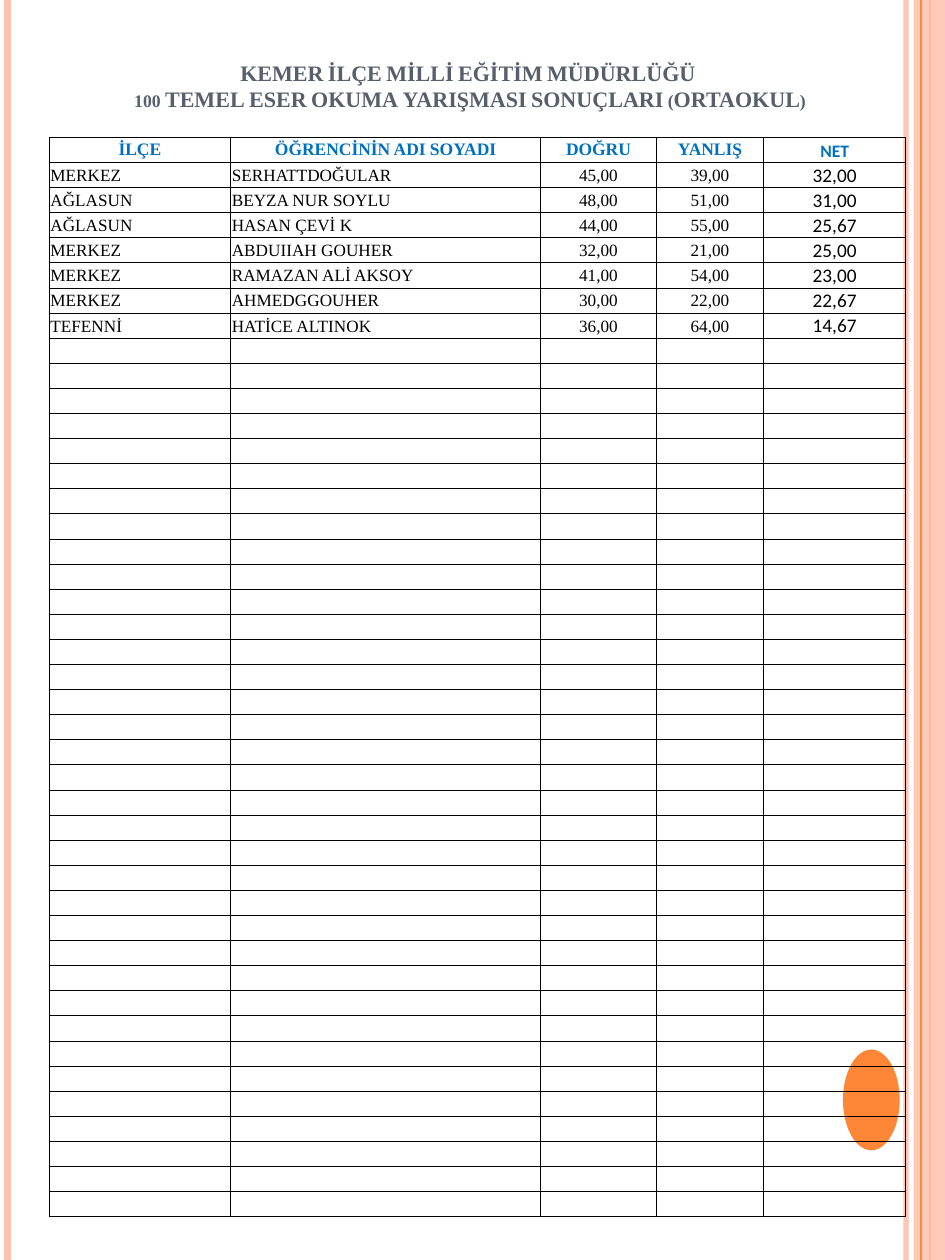
from lxml.etree import SubElement
from pptx import Presentation
from pptx.dml.color import RGBColor
from pptx.enum.shapes import MSO_CONNECTOR, MSO_SHAPE
from pptx.enum.text import MSO_ANCHOR, PP_ALIGN
from pptx.oxml.ns import qn
from pptx.util import Inches, Pt

STRAIGHT = MSO_CONNECTOR.STRAIGHT
RECTANGLE, OVAL = MSO_SHAPE.RECTANGLE, MSO_SHAPE.OVAL
MIDDLE, BOTTOM = MSO_ANCHOR.MIDDLE, MSO_ANCHOR.BOTTOM
LEFT, CENTER = PP_ALIGN.LEFT, PP_ALIGN.CENTER

WHITE = RGBColor(0xFF, 0xFF, 0xFF)
BLACK = RGBColor(0x00, 0x00, 0x00)
PEACH = RGBColor(0xFE, 0xC3, 0xAE)
ORANGE = RGBColor(0xFE, 0x86, 0x37)
SLATE = RGBColor(0x57, 0x5F, 0x6D)
BLUE = RGBColor(0x00, 0x70, 0xC0)

SERIF, SANS = "Times New Roman", "Calibri"
WIDTH, HEIGHT = 7.5, 10
ROW_COUNT = 43
COLUMN_WIDTHS = [1.44, 2.46, 0.92, 0.85, 1.13]
TITLE = (
    "KEMER İLÇE MİLLİ EĞİTİM MÜDÜRLÜĞÜ \v"
    "100 TEMEL ESER OKUMA YARIŞMASI SONUÇLARI (ORTAOKUL)"
)
HEADERS = ["İLÇE", "ÖĞRENCİNİN ADI SOYADI", "DOĞRU", "YANLIŞ", "NET"]
RESULTS = [
    ["MERKEZ", "SERHATTDOĞULAR", "45,00", "39,00", "32,00"],
    ["AĞLASUN", "BEYZA NUR SOYLU", "48,00", "51,00", "31,00"],
    ["AĞLASUN", "HASAN ÇEVİ K", "44,00", "55,00", "25,67"],
    ["MERKEZ", "ABDUIIAH GOUHER", "32,00", "21,00", "25,00"],
    ["MERKEZ", "RAMAZAN ALİ AKSOY", "41,00", "54,00", "23,00"],
    ["MERKEZ", "AHMEDGGOUHER", "30,00", "22,00", "22,67"],
    ["TEFENNİ", "HATİCE ALTINOK", "36,00", "64,00", "14,67"],
]


def set_opacity(shape, percent):
    """Make the colours of a shape partly transparent."""
    for color in shape._element.spPr.iter(qn("a:srgbClr")):
        SubElement(color, qn("a:alpha"), val=str(percent * 1000))


def add_stripe(slide, x, top, height, color, weight, opacity=100):
    """Draw one vertical line."""
    stripe = slide.shapes.add_connector(
        STRAIGHT, Inches(x), Inches(top), Inches(x), Inches(top + height)
    )
    stripe.line.color.rgb = color
    stripe.line.width = Pt(weight)
    SubElement(stripe._element.spPr, qn("a:effectLst"))
    if opacity < 100:
        set_opacity(stripe, opacity)


def add_plain_shape(slide, kind, left, top, width, height, color):
    """Draw a filled shape without outline or shadow."""
    shape = slide.shapes.add_shape(
        kind, Inches(left), Inches(top), Inches(width), Inches(height)
    )
    shape.shadow.inherit = False
    shape.fill.solid()
    shape.fill.fore_color.rgb = color
    shape.line.fill.background()
    return shape


def add_decoration(slide, left, top, width, height):
    """Draw the edge stripes, the right band and the oval."""
    right = left + width
    add_stripe(slide, right - 0.31, top, height, PEACH, 3, 93)
    add_stripe(slide, left + 0.06, top, height, PEACH, 4.5)
    add_stripe(slide, right - 0.12, top, height, ORANGE, 1.5)
    band = add_plain_shape(slide, RECTANGLE, right - 0.25, top, 0.25, height, PEACH)
    set_opacity(band, 87)
    add_stripe(slide, right - 0.19, top, height, ORANGE, 0.75)
    add_plain_shape(slide, OVAL, right - 0.81, top + 8.33, 0.45, 0.8, ORANGE)


def style_font(font, name, size, color, bold):
    """Set the face, size, colour and weight of a font."""
    font.name = name
    font.size = Pt(size)
    font.color.rgb = color
    font.bold = bold


def add_title(slide, left, top, width, height):
    """Place the two-line heading in small capitals."""
    box = slide.shapes.add_textbox(
        Inches(left), Inches(top), Inches(width), Inches(height)
    )
    frame = box.text_frame
    frame.word_wrap = True
    frame.vertical_anchor = BOTTOM
    paragraph = frame.paragraphs[0]
    paragraph.text = TITLE
    paragraph.alignment = CENTER
    style_font(paragraph.font, SERIF, 12.6, SLATE, True)
    paragraph.font._element.set("cap", "small")


def add_borders(cell):
    """Draw thin black lines on the four sides of a cell."""
    properties = cell._tc.get_or_add_tcPr()
    for side in ("a:lnL", "a:lnR", "a:lnT", "a:lnB"):
        line = SubElement(properties, qn(side), w=str(Pt(0.5)))
        fill = SubElement(line, qn("a:solidFill"))
        SubElement(fill, qn("a:srgbClr"), val=str(BLACK))


def fill_cell(cell, text, is_header, column):
    """Write and style one table cell."""
    is_net = column == len(HEADERS) - 1
    margin = Inches(0 if is_header else 0.01)
    cell.margin_left = cell.margin_right = cell.margin_top = margin
    cell.margin_bottom = 0
    cell.vertical_anchor = BOTTOM if is_net else MIDDLE
    add_borders(cell)
    if is_net:
        cell.fill.background()
    else:
        cell.fill.solid()
        cell.fill.fore_color.rgb = WHITE
    paragraph = cell.text_frame.paragraphs[0]
    if not text:
        SubElement(paragraph._p, qn("a:endParaRPr"), sz="1000")
        return
    paragraph.text = text
    paragraph.alignment = CENTER if is_header or column > 1 else LEFT
    size = 10 if is_header else 11 if is_net else 9.8
    color = BLUE if is_header else BLACK
    style_font(paragraph.font, SANS if is_net else SERIF, size, color, is_header)


def add_results_table(slide, left, top, width, height):
    """Place the results grid with its unused rows."""
    table = slide.shapes.add_table(
        ROW_COUNT, len(HEADERS),
        Inches(left), Inches(top), Inches(width), Inches(height),
    ).table
    table.first_row = table.horz_banding = False
    for column, column_width in zip(table.columns, COLUMN_WIDTHS):
        column.width = Inches(column_width)
    blank_rows = [[""] * len(HEADERS)] * (ROW_COUNT - 1 - len(RESULTS))
    for row, texts in enumerate([HEADERS] + RESULTS + blank_rows):
        table.rows[row].height = Inches(height / ROW_COUNT)
        for column, text in enumerate(texts):
            fill_cell(table.cell(row, column), text, row == 0, column)


def main():
    """Build and save the presentation."""
    presentation = Presentation()
    presentation.slide_width = Inches(WIDTH)
    presentation.slide_height = Inches(HEIGHT)
    slide = presentation.slides.add_slide(presentation.slide_layouts[6])
    add_decoration(slide, 0, 0, WIDTH, HEIGHT)
    add_title(slide, 0.67, 0.28, 6.12, 0.66)
    add_results_table(slide, 0.39, 1.09, sum(COLUMN_WIDTHS), 8.57)
    presentation.save("out.pptx")


if __name__ == "__main__":
    main()
